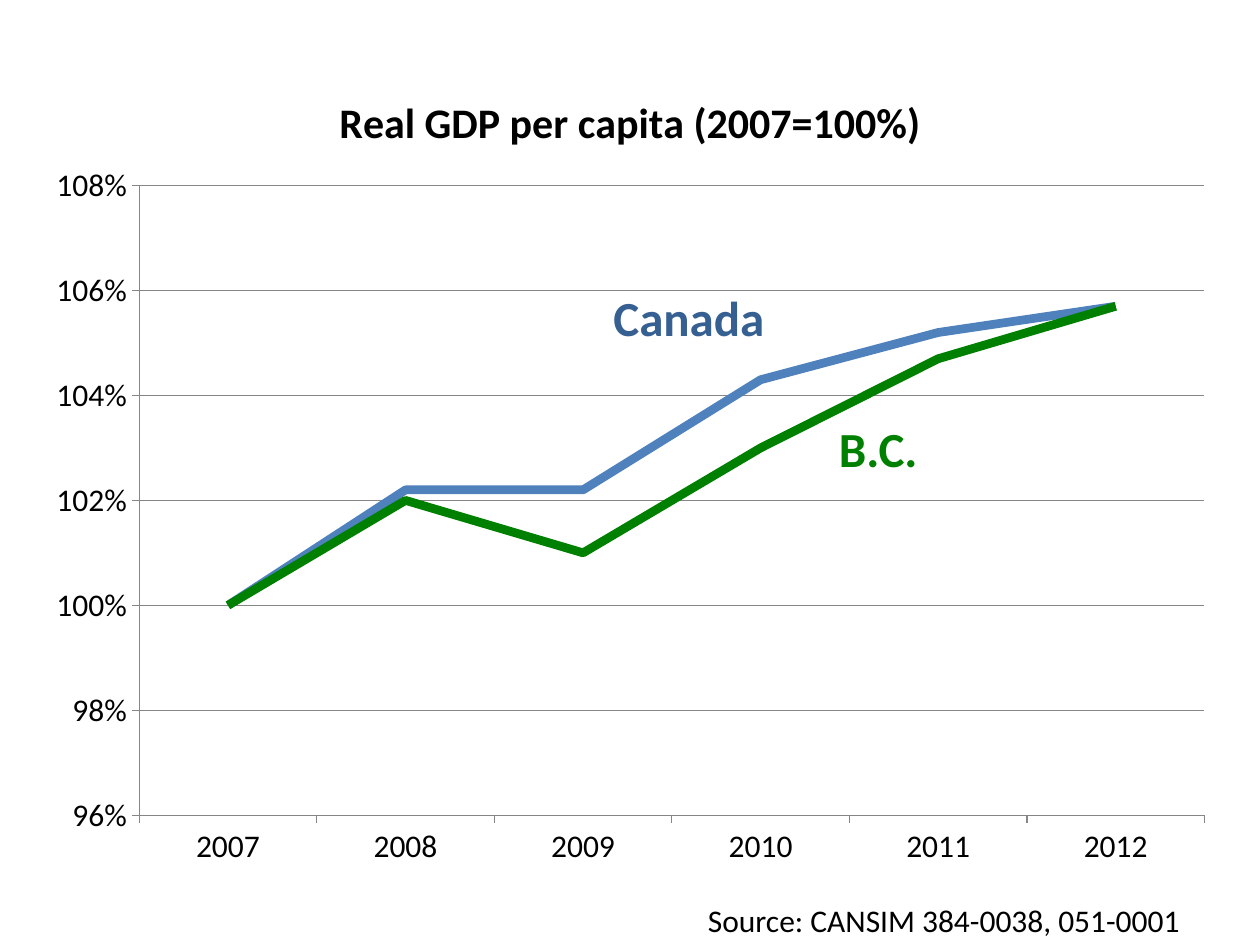
import dataclasses

import lxml.etree
import pptx
import pptx.chart.data
import pptx.dml.color
import pptx.enum.chart
import pptx.oxml.ns
import pptx.util

Inches = pptx.util.Inches


@dataclasses.dataclass(frozen=True)
class Theme:
    """Colours, font and type sizes of the slide."""
    font: str = "Calibri"
    text: str = "000000"
    canada: str = "4F81BD"
    canada_label: str = "376092"
    province: str = "008000"
    grid: str = "868686"
    title_size: int = 24
    label_size: int = 28
    body_size: int = 18
    series_width: int = 5


THEME = Theme()
YEARS = ["2007", "2008", "2009", "2010", "2011", "2012"]
SERIES = [
    ("Series 1", [1, 1.022, 1.022, 1.043, 1.052, 1.057], THEME.canada),
    ("Series 2", [1, 1.02, 1.01, 1.03, 1.047, 1.057], THEME.province),
]
PLOT_AREA = {"x": 0.09, "y": 0.15, "w": 0.89, "h": 0.77}


def set_values(target, values):
    """Set each named attribute of the target."""
    for name, value in values.items():
        setattr(target, name, value)


def style_font(font, size, color=THEME.text, bold=False):
    """Apply the theme font with a size, colour and weight."""
    set_values(font, {"name": THEME.font, "size": pptx.util.Pt(size), "bold": bold})
    font.color.rgb = pptx.dml.color.RGBColor.from_string(color)


def style_line(line, color, width):
    """Give a line its colour and width in points."""
    line.color.rgb = pptx.dml.color.RGBColor.from_string(color)
    line.width = pptx.util.Pt(width)


def place_plot(chart, fractions):
    """Fix the inner plot area as fractions of the chart."""
    qualify = pptx.oxml.ns.qn
    plot_area = chart.plots[0]._element.getparent()
    for previous in plot_area.findall(qualify("c:layout")):
        plot_area.remove(previous)
    layout = lxml.etree.Element(qualify("c:layout"))
    plot_area.insert(0, layout)
    manual = lxml.etree.SubElement(layout, qualify("c:manualLayout"))
    settings = {"layoutTarget": "inner", "xMode": "edge", "yMode": "edge", **fractions}
    for name, value in settings.items():
        lxml.etree.SubElement(manual, qualify(f"c:{name}")).set("val", str(value))


def style_axes(chart):
    """Format the year axis and the percentage axis."""
    for axis in (chart.category_axis, chart.value_axis):
        axis.major_tick_mark = pptx.enum.chart.XL_TICK_MARK.OUTSIDE
        style_font(axis.tick_labels.font, THEME.body_size)
        style_line(axis.format.line, THEME.grid, 0.75)
    axis = chart.value_axis
    set_values(axis, {"minimum_scale": 0.96, "maximum_scale": 1.08,
                      "major_unit": 0.02, "has_major_gridlines": True})
    set_values(axis.tick_labels, {"number_format": "0%", "number_format_is_linked": False})
    style_line(axis.major_gridlines.format.line, THEME.grid, 0.75)


def add_line_chart(page, title, left, top, width, height):
    """Add the titled line chart with its two series."""
    data = pptx.chart.data.CategoryChartData(number_format="0%")
    data.categories = YEARS
    for name, values, _ in SERIES:
        data.add_series(name, values)
    chart = page.shapes.add_chart(
        pptx.enum.chart.XL_CHART_TYPE.LINE, Inches(left), Inches(top),
        Inches(width), Inches(height), data).chart
    set_values(chart, {"has_legend": False, "has_title": True})
    style_font(chart.font, 10)
    chart.plots[0].vary_by_categories = False
    paragraph = chart.chart_title.text_frame.paragraphs[0]
    span = paragraph.add_run()
    span.text = title
    style_font(span.font, THEME.title_size, bold=True)
    chart.chart_title.include_in_layout = False
    style_axes(chart)
    for series, (_, _, color) in zip(chart.plots[0].series, SERIES):
        series.smooth = False
        series.marker.style = pptx.enum.chart.XL_MARKER_STYLE.NONE
        style_line(series.format.line, color, THEME.series_width)
    place_plot(chart, PLOT_AREA)


def add_label(page, text, left, top, width, height, size, color, bold):
    """Add one line of text in a box."""
    box = page.shapes.add_textbox(Inches(left), Inches(top), Inches(width), Inches(height))
    box.text_frame.word_wrap = True
    span = box.text_frame.paragraphs[0].add_run()
    span.text = text
    style_font(span.font, size, color, bold)


def main():
    """Build and save the slide."""
    deck = pptx.Presentation()
    set_values(deck, {"slide_width": Inches(10), "slide_height": Inches(7.5)})
    page = deck.slides.add_slide(deck.slide_layouts.get_by_name("Blank"))
    add_line_chart(page, "Real GDP per capita (2007=100%)", 0.25, 0.5, 9.5, 6.49)
    add_label(page, "Source: CANSIM 384-0038, 051-0001", 5.52, 7.1, 4.13, 0.4,
              THEME.body_size, THEME.text, False)
    add_label(page, "B.C.", 6.56, 3.27, 0.96, 0.47,
              THEME.label_size, THEME.province, True)
    add_label(page, "Canada", 4.77, 2.23, 1.57, 0.47,
              THEME.label_size, THEME.canada_label, True)
    deck.save("out.pptx")


if __name__ == "__main__":
    main()
